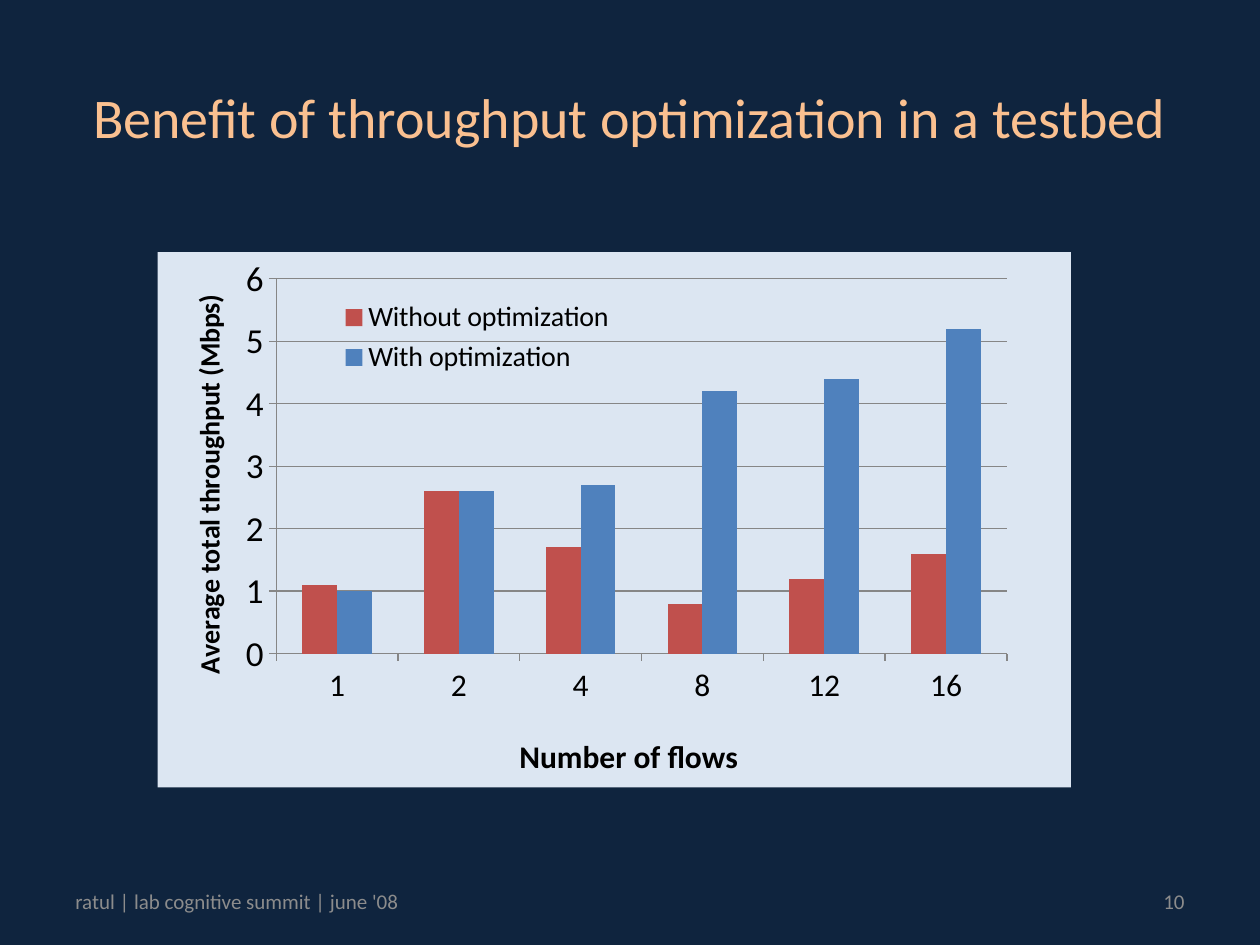
from dataclasses import dataclass

from lxml import etree
from pptx import Presentation
from pptx.chart.data import CategoryChartData
from pptx.dml.color import RGBColor
from pptx.enum.chart import XL_CHART_TYPE, XL_LEGEND_POSITION, XL_TICK_MARK
from pptx.enum.text import MSO_ANCHOR, PP_ALIGN
from pptx.oxml.ns import qn
from pptx.util import Inches, Pt

COLUMNS = XL_CHART_TYPE.COLUMN_CLUSTERED
LEGEND_RIGHT = XL_LEGEND_POSITION.RIGHT
TICK_OUTSIDE, TICK_NONE = XL_TICK_MARK.OUTSIDE, XL_TICK_MARK.NONE
MIDDLE = MSO_ANCHOR.MIDDLE
LEFT, CENTER, RIGHT = PP_ALIGN.LEFT, PP_ALIGN.CENTER, PP_ALIGN.RIGHT


@dataclass(frozen=True)
class Theme:
    font: str = "Calibri"
    background: str = "0F243E"
    title: str = "FAC090"
    footer: str = "8C8C8C"
    panel: str = "DCE6F2"
    ink: str = "000000"
    grid: str = "868686"
    title_size: int = 32
    footer_size: int = 12
    legend_size: int = 16


THEME = Theme()
WIDTH, HEIGHT = 10, 7.5
MARGIN = 0.5
FOOTER_TOP, FOOTER_HEIGHT = 6.95, 0.4

# Content: text, (left, top, width, height), alignment, size, colour
TEXTS = [
    ("Benefit of throughput optimization in a testbed",
     (MARGIN, 0.3, WIDTH - 2 * MARGIN, 1.25), CENTER, THEME.title_size, THEME.title),
    ("ratul | lab cognitive summit | june '08",
     (MARGIN, FOOTER_TOP, 3.08, FOOTER_HEIGHT), LEFT, THEME.footer_size, THEME.footer),
    ("10",
     (WIDTH - MARGIN - 2.33, FOOTER_TOP, 2.33, FOOTER_HEIGHT), RIGHT,
     THEME.footer_size, THEME.footer),
]
CHART_BOX = (1.25, 2, 7.25, 4.25)
FLOWS = ["1", "2", "4", "8", "12", "16"]
SERIES = [
    ("Without optimization", "C0504D", [1.1, 2.6, 1.7, 0.8, 1.2, 1.6]),
    ("With optimization", "4F81BD", [1, 2.6, 2.7, 4.2, 4.4, 5.2]),
]
# Places inside the chart, as shares of its size
PLOT_PLACE = {"x": 0.13, "y": 0.05, "w": 0.8, "h": 0.7}
LEGEND_PLACE = {"x": 0.19, "y": 0.08, "w": 0.32, "h": 0.16}
FLOWS_TITLE = ("Number of flows", 18, {"x": 0.39, "y": 0.89})
THROUGHPUT_TITLE = ("Average total throughput (Mbps)", 16, {"x": 0.03, "y": 0.07})


def color(value):
    return RGBColor.from_string(value)


def style_font(font, size, value, bold=False):
    font.name, font.size, font.bold = THEME.font, Pt(size), bold
    font.color.rgb = color(value)


def add_text(slide, text, box, alignment, size, value):
    frame = slide.shapes.add_textbox(*map(Inches, box)).text_frame
    frame.word_wrap = True
    frame.vertical_anchor = MIDDLE
    frame.text = text
    paragraph = frame.paragraphs[0]
    paragraph.alignment = alignment
    style_font(paragraph.runs[0].font, size, value)


def place(element, shares, index, inner=False):
    """Give a chart part a manual layout as child number index."""
    for old in element.findall(qn("c:layout")):
        element.remove(old)
    layout = etree.Element(qn("c:layout"))
    manual = etree.SubElement(layout, qn("c:manualLayout"))
    settings = {"layoutTarget": "inner"} if inner else {}
    settings.update({"xMode": "edge", "yMode": "edge"})
    settings.update(shares)
    for tag, value in settings.items():
        etree.SubElement(manual, qn("c:" + tag), val=str(value))
    element.insert(index, layout)


def style_axis(axis, size, title, rotation=0):
    text, title_size, shares = title
    style_font(axis.tick_labels.font, size, THEME.ink)
    axis.major_tick_mark, axis.minor_tick_mark = TICK_OUTSIDE, TICK_NONE
    axis.format.line.color.rgb = color(THEME.grid)
    frame = axis.axis_title.text_frame
    frame.text = text
    style_font(frame.paragraphs[0].runs[0].font, title_size, THEME.ink, bold=True)
    element = axis.axis_title._element
    element.find(".//" + qn("a:bodyPr")).set("rot", str(rotation * 60000))
    place(element, shares, 1)


def fill_panel(chart):
    properties = etree.Element(qn("c:spPr"))
    fill = etree.SubElement(properties, qn("a:solidFill"))
    etree.SubElement(fill, qn("a:srgbClr"), val=THEME.panel)
    line = etree.SubElement(properties, qn("a:ln"))
    etree.SubElement(line, qn("a:noFill"))
    chart._chartSpace.find(qn("c:chart")).addnext(properties)


def add_throughput_chart(slide):
    data = CategoryChartData()
    data.categories = FLOWS
    for name, _, values in SERIES:
        data.add_series(name, values)
    chart = slide.shapes.add_chart(COLUMNS, *map(Inches, CHART_BOX), data).chart
    style_font(chart.font, 10, THEME.ink)
    chart.has_title = False
    fill_panel(chart)

    # Columns
    plot = chart.plots[0]
    plot.gap_width, plot.overlap, plot.vary_by_categories = 150, 0, False
    for series, (_, value, _) in zip(plot.series, SERIES):
        series.format.fill.solid()
        series.format.fill.fore_color.rgb = color(value)
    place(chart._chartSpace.find(".//" + qn("c:plotArea")), PLOT_PLACE, 0, inner=True)

    # Axes
    style_axis(chart.category_axis, 18, FLOWS_TITLE)
    values = chart.value_axis
    style_axis(values, 20, THROUGHPUT_TITLE, rotation=-90)
    values.minimum_scale, values.maximum_scale, values.major_unit = 0, 6, 1
    values.tick_labels.number_format = "0"
    values.tick_labels.number_format_is_linked = False
    values.has_major_gridlines = True
    values.major_gridlines.format.line.color.rgb = color(THEME.grid)

    # Legend
    chart.has_legend = True
    legend = chart.legend
    legend.position = LEGEND_RIGHT
    legend.include_in_layout = False
    style_font(legend.font, THEME.legend_size, THEME.ink)
    place(legend._element, LEGEND_PLACE, 1)


def main():
    presentation = Presentation()
    presentation.slide_width, presentation.slide_height = Inches(WIDTH), Inches(HEIGHT)
    slide = presentation.slides.add_slide(presentation.slide_layouts[6])
    slide.background.fill.solid()
    slide.background.fill.fore_color.rgb = color(THEME.background)
    for item in TEXTS:
        add_text(slide, *item)
    add_throughput_chart(slide)
    presentation.save("out.pptx")


if __name__ == "__main__":
    main()
